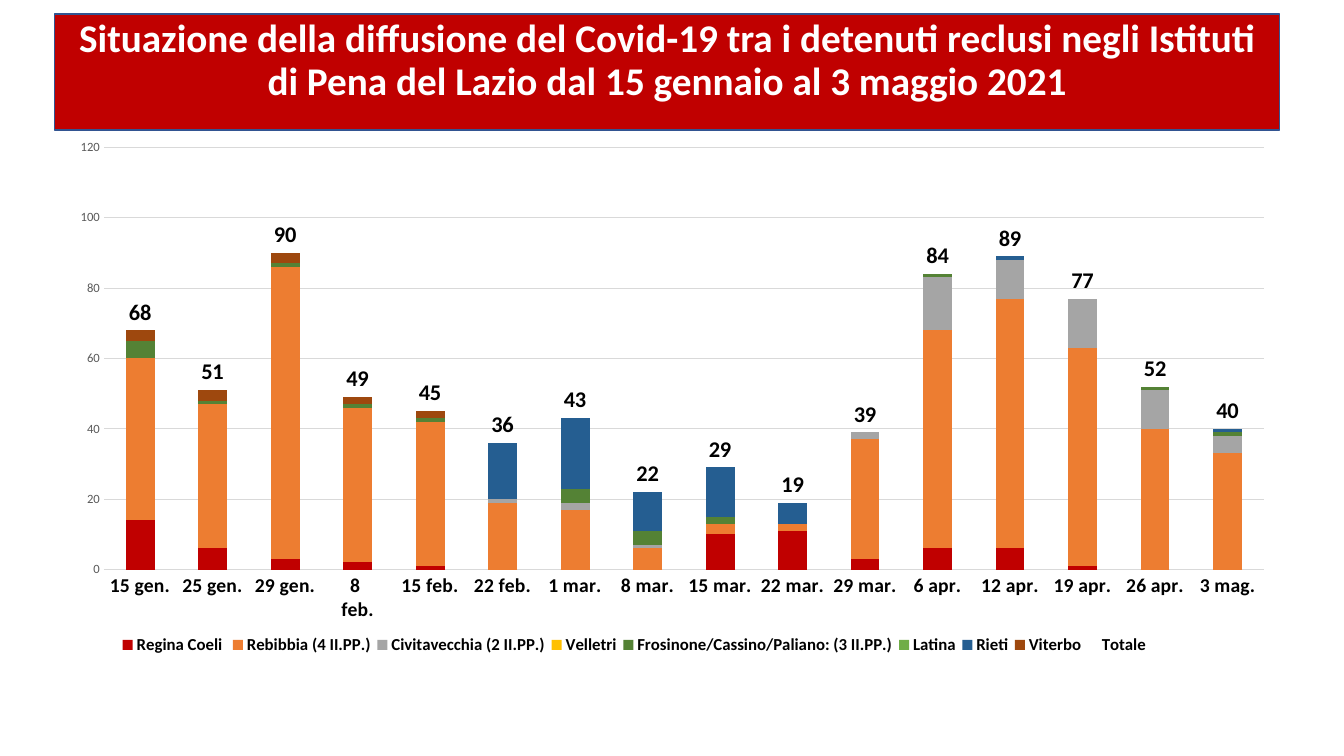
from dataclasses import dataclass

from lxml import etree
from pptx import Presentation
from pptx.chart.data import CategoryChartData
from pptx.dml.color import RGBColor
from pptx.enum.chart import XL_CHART_TYPE, XL_LABEL_POSITION, XL_LEGEND_POSITION, XL_TICK_MARK
from pptx.enum.shapes import MSO_SHAPE
from pptx.enum.text import MSO_ANCHOR, PP_ALIGN
from pptx.oxml.ns import qn
from pptx.util import Inches, Pt


@dataclass(frozen=True)
class Theme:
    font: str = "Calibri"
    banner: str = "C00000"
    banner_edge: str = "325491"
    banner_text: str = "FFFFFF"
    ink: str = "000000"
    muted: str = "595959"
    rule: str = "D9D9D9"
    title_size: int = 28
    total_size: int = 16
    date_size: int = 14
    legend_size: int = 12
    base_size: int = 10
    scale_size: int = 9


THEME = Theme()
WIDTH, HEIGHT = Inches(13.33), Inches(7.5)

TITLE = ("Situazione della diffusione del Covid-19 tra i detenuti reclusi negli Istituti "
         "di Pena del Lazio dal 15 gennaio al 3 maggio 2021")
DATES = ["15 gen.", "25 gen.", "29 gen.", "8 \nfeb.", "15 feb.", "22 feb.", "1 mar.", "8 mar.",
         "15 mar.", "22 mar.", "29 mar.", "6 apr.", "12 apr.", "19 apr.", "26 apr.", "3 mag."]
NO_CASES = [0] * len(DATES)
PRISONS = [
    ("Regina Coeli ", "C00000", [14, 6, 3, 2, 1, 0, 0, 0, 10, 11, 3, 6, 6, 1, 0, 0]),
    ("Rebibbia (4 II.PP.)", "ED7D31",
     [46, 41, 83, 44, 41, 19, 17, 6, 3, 2, 34, 62, 71, 62, 40, 33]),
    ("Civitavecchia (2 II.PP.)", "A5A5A5", [0, 0, 0, 0, 0, 1, 2, 1, 0, 0, 2, 15, 11, 14, 11, 5]),
    ("Velletri", "FFC000", NO_CASES),
    ("Frosinone/Cassino/Paliano: (3 II.PP.)", "548235",
     [5, 1, 1, 1, 1, 0, 4, 4, 2, 0, 0, 1, 0, 0, 1, 1]),
    ("Latina", "70AD47", NO_CASES),
    ("Rieti", "255E91", [0, 0, 0, 0, 0, 16, 20, 11, 14, 6, 0, 0, 1, 0, 0, 1]),
    ("Viterbo", "9E480E", [3, 3, 3, 2, 2, 0, 0, 0, 0, 0, 0, 0, 0, 0, 0, 0]),
]


def place(left, top, width, height):
    """Turn percentages of the slide into left, top, width and height."""
    return [int(share * side / 100) for share, side in
            zip((left, top, width, height), (WIDTH, HEIGHT) * 2)]


def apply(target, values):
    for name, value in values.items():
        setattr(target, name, value)


def style_font(font, size, color, bold=False):
    apply(font, {"name": THEME.font, "size": Pt(size), "bold": bold})
    font.color.rgb = RGBColor.from_string(color)


def style_line(line, color, width):
    line.color.rgb = RGBColor.from_string(color)
    line.width = Pt(width)


def set_layout(element, after, inner=False, **shares):
    """Fix the place of a chart part, in shares of the chart."""
    for old in element.findall(qn("c:layout")):
        element.remove(old)
    layout = etree.Element(qn("c:layout"))
    manual = etree.SubElement(layout, qn("c:manualLayout"))
    entries = {"layoutTarget": "inner"} if inner else {}
    entries |= {"xMode": "edge", "yMode": "edge"} | shares
    for tag, value in entries.items():
        etree.SubElement(manual, qn(f"c:{tag}")).set("val", str(value))
    element.insert(after, layout)


def add_banner(slide, text, box):
    banner = slide.shapes.add_shape(MSO_SHAPE.RECTANGLE, *box)
    banner.shadow.inherit = False
    banner.fill.solid()
    banner.fill.fore_color.rgb = RGBColor.from_string(THEME.banner)
    style_line(banner.line, THEME.banner_edge, 1)
    apply(banner.text_frame, {"word_wrap": True, "vertical_anchor": MSO_ANCHOR.TOP})
    title = banner.text_frame.paragraphs[0]
    apply(title, {"alignment": PP_ALIGN.CENTER, "line_spacing": 0.9, "space_before": Pt(10)})
    run = title.add_run()
    run.text = text
    style_font(run.font, THEME.title_size, THEME.banner_text, True)


def style_axes(chart):
    dates, scale = chart.category_axis, chart.value_axis
    for axis in (dates, scale):
        apply(axis, {"major_tick_mark": XL_TICK_MARK.NONE, "minor_tick_mark": XL_TICK_MARK.NONE})
    style_font(dates.tick_labels.font, THEME.date_size, THEME.ink, True)
    style_line(dates.format.line, THEME.rule, 0.75)
    apply(scale, {"minimum_scale": 0, "maximum_scale": 120, "major_unit": 20,
                  "has_major_gridlines": True})
    style_font(scale.tick_labels.font, THEME.scale_size, THEME.muted)
    scale.format.line.fill.background()
    style_line(scale.major_gridlines.format.line, THEME.rule, 0.75)


def style_totals(totals):
    """Hide the bars of the totals and leave their values above the stacks."""
    totals.format.fill.background()
    totals.format.line.fill.background()
    labels = totals.data_labels
    apply(labels, {"show_value": True, "position": XL_LABEL_POSITION.INSIDE_BASE})
    style_font(labels.font, THEME.total_size, THEME.ink, True)


def add_cases_chart(slide, box):
    cases = CategoryChartData()
    cases.categories = DATES
    for name, _, counts in PRISONS:
        cases.add_series(name, counts)
    cases.add_series("Totale", [sum(day) for day in zip(*(row[2] for row in PRISONS))])

    chart = slide.shapes.add_chart(XL_CHART_TYPE.COLUMN_STACKED, *box, cases).chart
    apply(chart, {"has_title": False, "has_legend": True})
    style_font(chart.font, THEME.base_size, THEME.ink)
    stacks = chart.plots[0]
    apply(stacks, {"gap_width": 150, "overlap": 100, "vary_by_categories": False})
    *prisons, totals = stacks.series
    for prison, (_, color, _) in zip(prisons, PRISONS):
        prison.format.fill.solid()
        prison.format.fill.fore_color.rgb = RGBColor.from_string(color)
    style_totals(totals)
    style_axes(chart)

    legend = chart.legend
    apply(legend, {"position": XL_LEGEND_POSITION.BOTTOM, "include_in_layout": False})
    style_font(legend.font, THEME.legend_size, THEME.ink, True)
    plot_area = chart.element.find(f".//{qn('c:plotArea')}")
    set_layout(plot_area, 0, inner=True, x=0.04, y=0.034, w=0.94, h=0.786)
    set_layout(legend._element, 1, x=0.05, y=0.93, w=0.84, h=0.06)


def main():
    deck = Presentation()
    apply(deck, {"slide_width": WIDTH, "slide_height": HEIGHT})
    slide = deck.slides.add_slide(deck.slide_layouts[6])
    add_banner(slide, TITLE, place(4.05, 1.87, 91.15, 15.33))
    add_cases_chart(slide, place(4.05, 17.07, 91.82, 71.07))
    deck.save("out.pptx")


if __name__ == "__main__":
    main()
